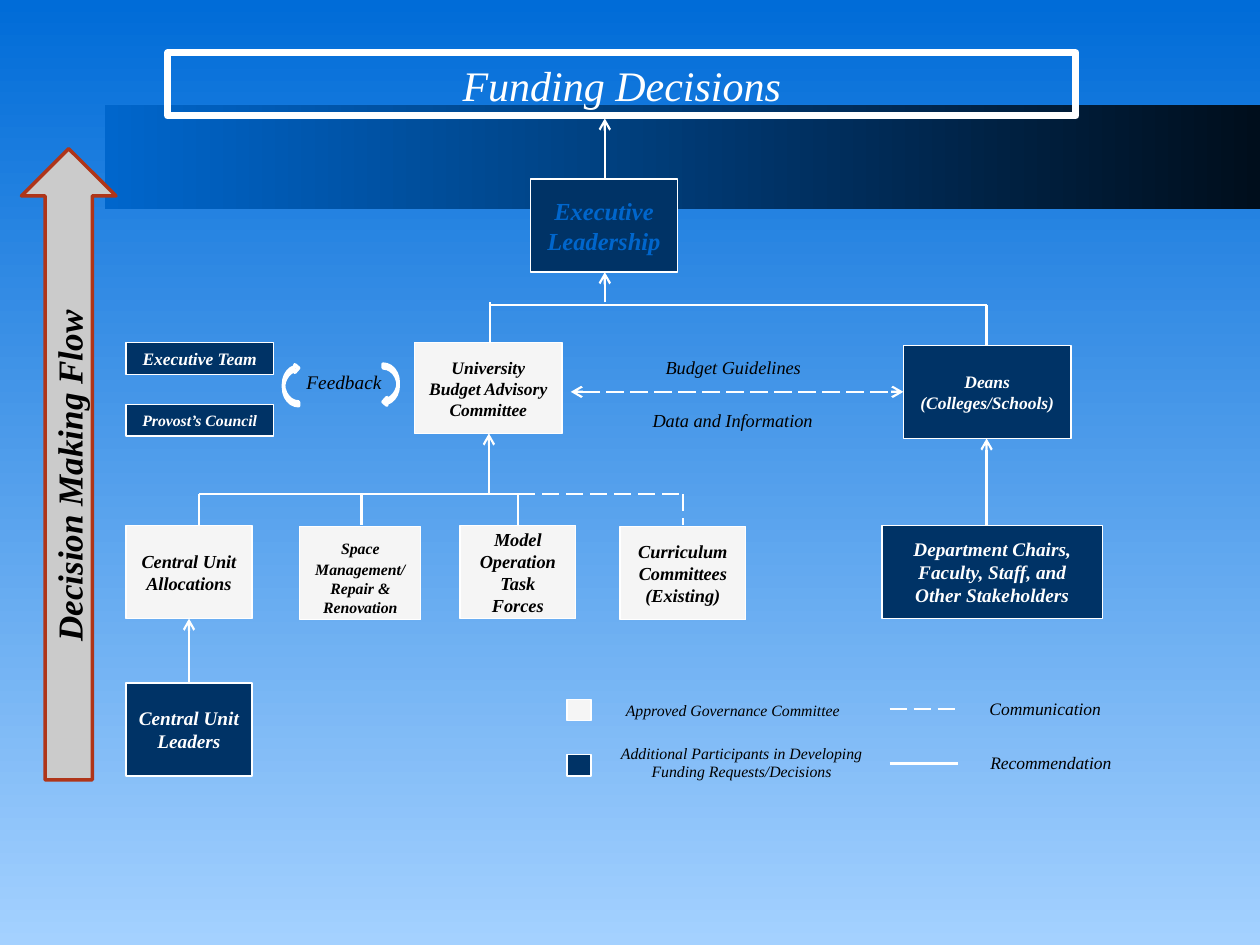
from collections import namedtuple

from lxml import etree
from pptx import Presentation
from pptx.dml.color import RGBColor
from pptx.enum.dml import MSO_LINE
from pptx.enum.shapes import MSO_CONNECTOR, MSO_SHAPE
from pptx.enum.text import MSO_ANCHOR, MSO_AUTO_SIZE, PP_ALIGN
from pptx.oxml.ns import qn
from pptx.util import Inches, Pt

NAVY, PALE, WHITE, BLACK, BLUE = "003366", "F5F5F5", "FFFFFF", "000000", "0066CC"
UNIT_HEIGHT = 0.74
Box = namedtuple("Box", "x y w h")


def color(hex_string):
    return RGBColor.from_string(hex_string)


def apply_gradient(fill, start, end, angle):
    fill.gradient()
    fill.gradient_angle = angle
    for stop, shade, position in zip(fill.gradient_stops, (start, end), (0, 1)):
        stop.color.rgb = color(shade)
        stop.position = position


def write_text(shape, *runs, size=10, ink=BLACK, bold=False,
               anchor=MSO_ANCHOR.MIDDLE, grow=False):
    """Fill one centred paragraph; a run is a string or a (string, size) pair."""
    frame = shape.text_frame
    frame.word_wrap = True
    frame.vertical_anchor = anchor
    if grow:
        frame.auto_size = MSO_AUTO_SIZE.SHAPE_TO_FIT_TEXT
    paragraph = frame.paragraphs[0]
    paragraph.alignment = PP_ALIGN.CENTER
    for item in runs:
        words, points = (item, size) if isinstance(item, str) else item
        run = paragraph.add_run()
        run.text = words
        run.font.name = "Times New Roman"
        run.font.size = Pt(points)
        run.font.bold = bold
        run.font.italic = True
        run.font.color.rgb = color(ink)


def add_block(slide, box, fill=None, line=WHITE, weight=0.75, kind=MSO_SHAPE.RECTANGLE):
    shape = slide.shapes.add_shape(kind, *map(Inches, box))
    shape.shadow.inherit = False
    if fill:
        shape.fill.solid()
        shape.fill.fore_color.rgb = color(fill)
    else:
        shape.fill.background()
    if line:
        shape.line.color.rgb = color(line)
        shape.line.width = Pt(weight)
    else:
        shape.line.fill.background()
    return shape


def add_unit(slide, box, *runs, fill=NAVY, ink=None, size=10):
    ink = ink or (WHITE if fill == NAVY else BLACK)
    write_text(add_block(slide, box, fill), *runs, size=size, ink=ink, bold=True)


def add_label(slide, box, words, size=10):
    label = slide.shapes.add_textbox(*map(Inches, box))
    write_text(label, words, size=size, anchor=MSO_ANCHOR.TOP, grow=True)


def add_link(slide, x1, y1, x2, y2, dashed=False, ends=()):
    """Draw a straight line; ends holds "headEnd" and/or "tailEnd" for arrowheads."""
    link = slide.shapes.add_connector(MSO_CONNECTOR.STRAIGHT, *map(Inches, (x1, y1, x2, y2)))
    link.line.color.rgb = color(WHITE)
    link.line.width = Pt(1.25)
    if dashed:
        link.line.dash_style = MSO_LINE.LONG_DASH
    properties = link._element.spPr
    for end in ends:
        etree.SubElement(properties.find(qn("a:ln")), qn("a:" + end), type="arrow")
    etree.SubElement(properties, qn("a:effectLst"))


def add_arrow(slide, x, start, end):
    add_link(slide, x, start, x, end, ends=("tailEnd",))


def draw_backdrop(slide, band):
    apply_gradient(slide.background.fill, "006CD8", "A4D1FF", 270)
    shape = add_block(slide, band, line=None)
    apply_gradient(shape.fill, BLUE, "000E1C", 0)


def draw_flow_arrow(slide, box):
    arrow = add_block(slide, box, "CBCBCB", "AF3519", 2, MSO_SHAPE.UP_ARROW)
    write_text(arrow, "Decision Making Flow", size=20, bold=True)
    arrow.text_frame._txBody.bodyPr.set("vert", "vert270")


def draw_decisions(slide, box):
    """Title frame with the executive leadership below it."""
    title = add_block(slide, Box(box.x, box.y, box.w, 0.5), weight=4)
    write_text(title, "Funding Decisions", size=24, ink=WHITE,
               anchor=MSO_ANCHOR.TOP, grow=True)
    top = box.y + 1
    add_unit(slide, Box(box.x + 2.88, top, 1.17, UNIT_HEIGHT),
             "Executive Leadership", size=14, ink=BLUE)
    center = box.x + 3.47
    add_arrow(slide, center, top, box.y + 0.52)
    add_arrow(slide, center, box.y + 1.98, top + UNIT_HEIGHT)


def draw_feedback(slide, box):
    """Two advising groups and the feedback loop beside them."""
    add_unit(slide, Box(box.x, box.y, 1.17, 0.25), "Executive Team")
    add_unit(slide, Box(box.x, box.y + 0.49, 1.17, 0.25), "Provost’s Council", size=9)
    top = box.y + 0.17
    add_label(slide, Box(box.x + 1.27, top, 0.92, 0.29), "Feedback", size=11)
    for dx, fill, turn in ((2.04, WHITE, 0), (1.25, "ED4722", 180)):
        curve = add_block(slide, Box(box.x + dx, top, 0.12, 0.33), fill,
                          weight=2, kind=MSO_SHAPE.CURVED_LEFT_ARROW)
        curve.rotation = turn


def draw_advisers(slide, box):
    """Committee and deans, joined above and exchanging information."""
    top, deans = box.y + 0.3, box.x + 4.54
    add_unit(slide, Box(box.x, top, 1.17, 0.72),
             "University Budget Advisory Committee", fill=PALE)
    add_unit(slide, Box(box.x + 3.88, top + 0.02, 1.33, UNIT_HEIGHT), "Deans (Colleges/Schools)")
    add_link(slide, box.x + 0.59, box.y, deans, box.y)
    add_link(slide, box.x + 0.6, box.y - 0.02, box.x + 0.6, top)
    add_link(slide, deans, box.y, deans, top + 0.02)
    add_link(slide, box.x + 1.24, top + 0.39, box.x + 3.88, top + 0.39,
             dashed=True, ends=("headEnd", "tailEnd"))
    add_label(slide, Box(box.x + 1.82, top + 0.06, 1.42, 0.29), "Budget Guidelines", size=10.5)
    add_label(slide, Box(box.x + 1.65, top + 0.48, 1.75, 0.28), "Data and Information", size=10.5)


def draw_units(slide, box):
    """Committees under their shared bar, with leaders and stakeholders."""
    top = box.y + 0.25
    committees = (
        (0, 0, 1, 10.5, ["Central Unit Allocations"]),
        (1.38, 0.01, 0.96, 9, ["Space", (" ", 14), "Management/Repair & Renovation"]),
        (2.65, 0, 0.92, 10.5, ["Model Operation Task Forces"]),
        (3.92, 0.01, 1, 10.5, ["Curriculum Committees (Existing)"]),
    )
    for dx, dy, width, size, runs in committees:
        add_unit(slide, Box(box.x + dx, top + dy, width, UNIT_HEIGHT), *runs,
                 fill=PALE, size=size)
    add_unit(slide, Box(box.x + 6, top, 1.75, UNIT_HEIGHT),
             "Department Chairs, Faculty, Staff, and Other Stakeholders", size=11)
    add_unit(slide, Box(box.x, top + 1.25, 1, UNIT_HEIGHT), "Central Unit Leaders", size=11)

    drops = [box.x + dx for dx in (0.58, 1.87, 3.11, 4.42)]
    for x in drops:
        add_link(slide, x, box.y, x, top, dashed=x == drops[-1])
    add_link(slide, drops[0], box.y, drops[2], box.y)
    add_link(slide, drops[2], box.y, drops[3], box.y, dashed=True)
    add_arrow(slide, box.x + 2.88, box.y, box.y - 0.48)
    add_arrow(slide, box.x + 6.83, top, box.y - 0.44)
    add_arrow(slide, box.x + 0.5, top + 1.25, top + UNIT_HEIGHT)


def draw_legend(slide, box):
    for row, fill in enumerate((PALE, NAVY)):
        add_block(slide, Box(box.x, box.y + 0.06 + row * 0.44, 0.19, 0.17), fill)
        y = box.y + 0.14 + row * 0.43
        add_link(slide, box.x + 2.56, y, box.x + 3.1, y, dashed=row == 0)
    add_label(slide, Box(box.x + 0.32, box.y + 0.02, 1.99, 0.25),
              "Approved Governance Committee", size=9)
    add_label(slide, Box(box.x + 0.3, box.y + 0.36, 2.17, 0.4),
              "Additional Participants in Developing Funding Requests/Decisions", size=9)
    add_label(slide, Box(box.x + 3.17, box.y, 1.25, 0.27), "Communication")
    add_label(slide, Box(box.x + 3.15, box.y + 0.43, 1.38, 0.27), "Recommendation")


def main():
    deck = Presentation()
    deck.slide_width, deck.slide_height = Inches(10), Inches(7.5)
    slide = deck.slides.add_slide(deck.slide_layouts[6])
    draw_backdrop(slide, Box(0.83, 0.83, 9.17, 0.83))
    draw_decisions(slide, Box(1.33, 0.42, 7.21, 1.98))
    draw_feedback(slide, Box(1, 2.72, 2.16, 0.74))
    draw_advisers(slide, Box(3.29, 2.42, 5.21, 1.06))
    draw_units(slide, Box(1, 3.92, 7.75, 2.24))
    draw_legend(slide, Box(4.5, 5.49, 4.53, 0.76))
    draw_flow_arrow(slide, Box(0.17, 1.18, 0.75, 5.01))
    deck.save("out.pptx")


if __name__ == "__main__":
    main()
